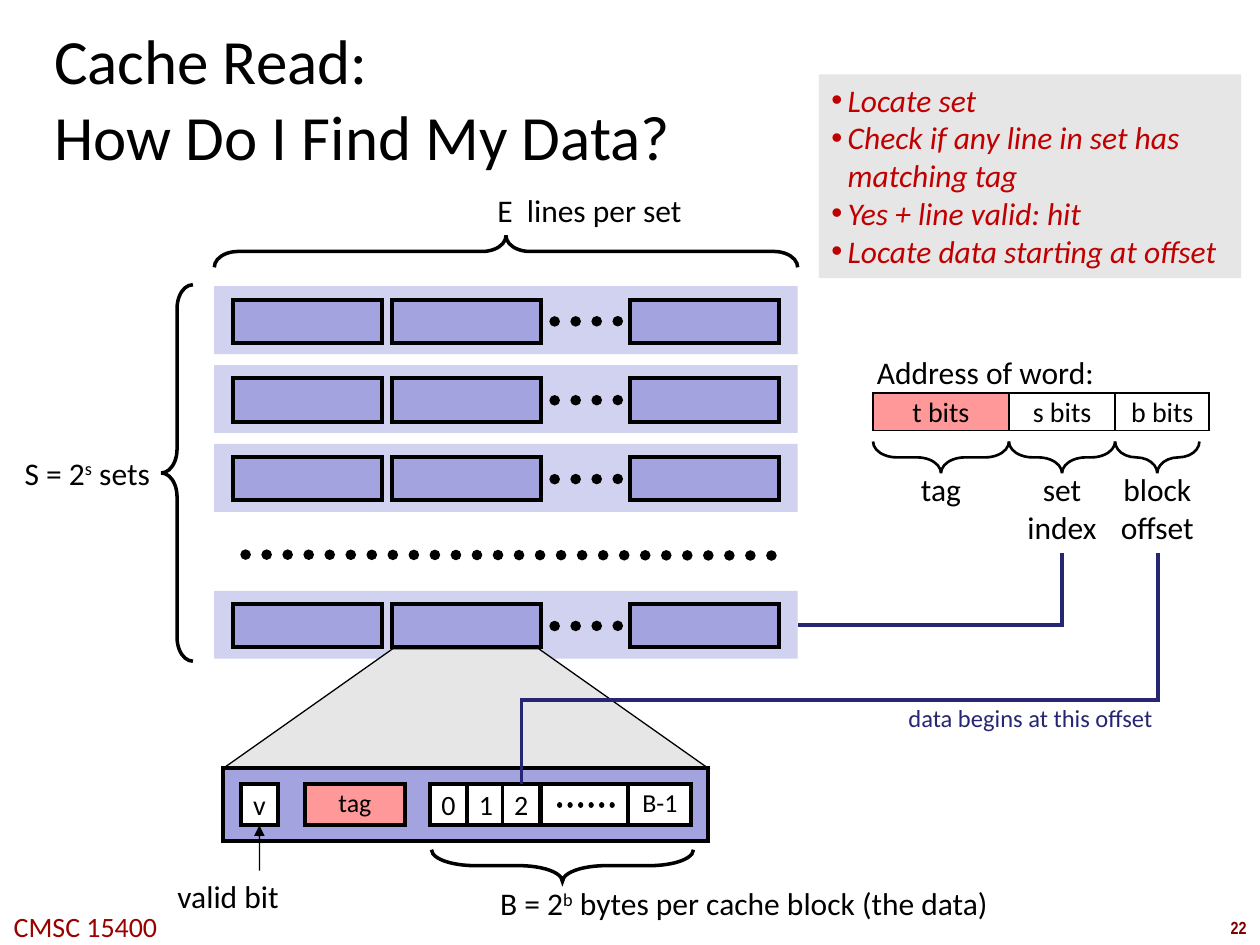
import lxml.etree
import pptx
import pptx.dml.color
import pptx.enum.dml
import pptx.enum.shapes
import pptx.enum.text
import pptx.oxml.ns
import pptx.util

Cm, Pt = pptx.util.Cm, pptx.util.Pt
qn = pptx.oxml.ns.qn
SHAPE = pptx.enum.shapes.MSO_SHAPE
CONNECTOR = pptx.enum.shapes.MSO_CONNECTOR
ALIGN = pptx.enum.text.PP_ALIGN
ANCHOR = pptx.enum.text.MSO_ANCHOR

COLOURS = {
    "black": "000000", "white": "FFFFFF", "grey": "E6E6E6",
    "set": "D1D1F0", "line": "A3A3E0", "tag": "FF9999",
    "navy": "262673", "note": "C00000", "course": "990000", "number": "800000",
}


def colour(name):
    return pptx.dml.color.RGBColor.from_string(COLOURS[name])


def add_xml(parent, tag, **attributes):
    return lxml.etree.SubElement(parent, qn(tag), attributes)


class Diagram:
    """Draws styled elements on the current page; lengths are centimetres."""

    def __init__(self, page, font="Calibri"):
        self.page = page
        self.canvas = page.shapes
        self.font = font

    def add_spans(self, para, text, size, ink="black", font=None, bold=False, italic=False):
        """Add runs to a paragraph; ^x^ marks a superscript."""
        for index, part in enumerate(text.split("^")):
            span = para.add_run()
            span.text = part
            span.font.size = Pt(size)
            span.font.name = font or self.font
            span.font.bold, span.font.italic = bold, italic
            span.font.color.rgb = colour(ink)
            if index % 2:
                span._r.get_or_add_rPr().set("baseline", "30000")

    def label(self, lines, left, top, width, height, size=18, **style):
        """Centred text without wrapping, one paragraph per line."""
        box = self.canvas.add_textbox(Cm(left), Cm(top), Cm(width), Cm(height))
        frame = box.text_frame
        frame.word_wrap = False
        for index, line in enumerate(lines.split("\n")):
            para = frame.add_paragraph() if index else frame.paragraphs[0]
            para.alignment = ALIGN.CENTER
            self.add_spans(para, line, size, **style)

    def title(self, lines, left, top, width, height):
        box = self.canvas.add_textbox(Cm(left), Cm(top), Cm(width), Cm(height))
        frame = box.text_frame
        frame.word_wrap = True
        frame.vertical_anchor = ANCHOR.MIDDLE
        frame.margin_left = frame.margin_right = Cm(0.1)
        frame.margin_top = frame.margin_bottom = Cm(0.1)
        para = frame.paragraphs[0]
        for index, line in enumerate(lines):
            if index:
                para.add_line_break()
            self.add_spans(para, line, 36)

    def block(self, left, top, width, height, fill=None, weight=2.25, text="",
              size=16, spacing=None, kind=SHAPE.RECTANGLE, adjust=()):
        shape = self.canvas.add_shape(kind, Cm(left), Cm(top), Cm(width), Cm(height))
        shape.shadow.inherit = False
        for index, value in enumerate(adjust):
            shape.adjustments[index] = value
        if fill:
            shape.fill.solid()
            shape.fill.fore_color.rgb = colour(fill)
        else:
            shape.fill.background()
        if weight:
            shape.line.color.rgb = colour("black")
            shape.line.width = Pt(weight)
            add_xml(shape.line._get_or_add_ln(), "a:miter", lim="800000")
        else:
            shape.line.fill.background()
        if text:
            frame = shape.text_frame
            frame.word_wrap = False
            frame.vertical_anchor = ANCHOR.MIDDLE
            para = frame.paragraphs[0]
            para.alignment = ALIGN.CENTER
            para.line_spacing = spacing
            self.add_spans(para, text, size)
        return shape

    def brace(self, left, top, width, height, turn=0, weight=2, curl=0.75):
        """Brace filling the box as seen; turn 90 points up, 270 down."""
        if turn:
            left, top = left + (width - height) / 2, top + (height - width) / 2
            width, height = height, width
        shape = self.block(left, top, width, height, weight=weight,
                           kind=SHAPE.LEFT_BRACE, adjust=(curl, 0.5))
        shape.rotation = turn

    def connector(self, start, end, ink="black", weight=2, dotted=False,
                  arrow=False, kind=CONNECTOR.STRAIGHT):
        line = self.canvas.add_connector(kind, *(Cm(v) for v in (*start, *end)))
        line.line.color.rgb = colour(ink)
        line.line.width = Pt(weight)
        outline = line.line._get_or_add_ln()
        if dotted:
            line.line.dash_style = pptx.enum.dml.MSO_LINE.ROUND_DOT
            outline.set("cap", "rnd")
        if kind == CONNECTOR.ELBOW:
            add_xml(outline, "a:miter", lim="800000")
        if arrow:
            add_xml(outline, "a:tailEnd", type="triangle")
        add_xml(line._element.spPr, "a:effectLst")
        return line

    def elbow(self, start, end, bend=None):
        """Route that leaves downwards and runs left, with a second bend if given."""
        run, drop = start[0] - end[0], end[1] - start[1]
        middle_x, middle_y = (start[0] + end[0]) / 2, (start[1] + end[1]) / 2
        left, top = middle_x - drop / 2, middle_y - run / 2
        line = self.connector((left, top), (left + drop, top + run), "navy",
                              kind=CONNECTOR.ELBOW)
        properties = line._element.spPr
        properties.find(qn("a:xfrm")).set("rot", "5400000")
        geometry = properties.find(qn("a:prstGeom"))
        if bend is None:
            geometry.set("prst", "bentConnector2")
        else:
            guides = geometry.find(qn("a:avLst"))
            if guides is None:
                guides = add_xml(geometry, "a:avLst")
            add_xml(guides, "a:gd", name="adj1", fmla=f"val {round(bend * 100000)}")

    def cache_set(self, top):
        """One set: three cache lines and dots, grouped."""
        self.canvas = self.page.shapes.add_group_shape().shapes
        self.block(4.32, top, 11.76, 1.37, "set", weight=0)
        for left in (4.7, 7.9, 12.7):
            last_line = self.block(left, top + 0.27, 3, 0.87, "line")
        middle = top + 0.71
        dots = self.connector((11.18, middle), (12.7, middle), weight=6, dotted=True)
        dots.end_connect(last_line, 1)
        self.canvas = self.page.shapes

    def bullets(self, lines, left, top, width, height):
        frame = self.block(left, top, width, height, "grey", weight=0).text_frame
        frame.word_wrap = True
        frame.vertical_anchor = ANCHOR.TOP
        for index, line in enumerate(lines):
            para = frame.add_paragraph() if index else frame.paragraphs[0]
            para.alignment = ALIGN.LEFT
            properties = para._p.get_or_add_pPr()
            properties.set("marL", str(Cm(0.33)))
            properties.set("indent", str(-Cm(0.33)))
            add_xml(properties, "a:buFont", typeface="Arial")
            add_xml(properties, "a:buChar", char="•")
            self.add_spans(para, line, 18, "note", italic=True)


def main():
    deck = pptx.Presentation()
    deck.slide_width, deck.slide_height = Cm(25.4), Cm(19.05)
    diagram = Diagram(deck.slides.add_slide(deck.slide_layouts[6]))

    # Footer and title
    diagram.label("22", 24.54, 18.36, 0.86, 0.69, 10, ink="number",
                  font="Arial Narrow", bold=True)
    diagram.label("CMSC 15400", 0, 18.21, 3.45, 0.94, 16, ink="course")
    diagram.title(["Cache Read: ", "How Do I Find My Data?"], 0.99, 0.91, 21.08, 2.11)

    # Cache: S sets of E lines
    for top in [5.77 + 1.59 * row for row in range(3)] + [11.91]:
        diagram.cache_set(top)
    diagram.connector((4.95, 11.18), (15.72, 11.2), weight=6, dotted=True)
    diagram.brace(4.32, 4.75, 11.76, 0.64, turn=90)
    diagram.label("E  lines per set", 9.75, 3.73, 4.27, 1.02)
    diagram.brace(3.25, 5.74, 0.64, 7.59)
    diagram.label("S = 2^s^ sets", 0.2, 9.02, 3.12, 1.02)

    # One line enlarged
    diagram.block(4.5, 13.08, 9.78, 2.41, "grey", 0.75, kind=SHAPE.TRAPEZOID,
                  adjust=(1.418,))
    diagram.block(4.5, 15.49, 9.78, 1.47, "line")
    cell_top, cell_height = 15.8, 0.84
    for left, width, fill, text, size, spacing in (
        (8.66, 0.76, "white", "0", 16, None),
        (9.42, 0.76, "white", "1", 16, None),
        (10.13, 0.76, "white", "2", 16, None),
        (12.67, 1.27, "white", "B-1", 14.8, 0.9),
        (10.9, 1.77, "white", "", 16, None),
        (6.15, 2.01, "tag", "tag", 14.8, 0.9),
        (4.85, 0.76, "white", "v", 16, None),
    ):
        valid_cell = diagram.block(left, cell_top, width, cell_height, fill,
                                   text=text, size=size, spacing=spacing)
    diagram.connector((11.28, 16.23), (12.55, 16.23), weight=3, dotted=True)
    diagram.label("valid bit", 3.28, 17.55, 2.64, 1.02)
    arrow = diagram.connector((5.23, 17.55), (5.23, 16.64), weight=0.75, arrow=True)
    arrow.end_connect(valid_cell, 2)
    diagram.brace(8.7, 17.13, 5.28, 0.64, turn=270, curl=1.37)
    diagram.label("B = 2^b^ bytes per cache block (the data)", 9.68, 17.7, 10.64, 1.02)

    # Address fields
    diagram.label("Address of word:", 17.35, 6.99, 5.03, 1.02)
    for left, width, brace_width, fill, bits, name in (
        (17.6, 2.74, 2.74, "tag", "t bits", "tag"),
        (20.34, 2.14, 2.14, "white", "s bits", "set\nindex"),
        (22.48, 1.9, 1.7, "white", "b bits", "block\noffset"),
    ):
        diagram.block(left, 7.92, width, 0.76, fill, 1, bits)
        diagram.brace(left, 8.9, brace_width, 0.64, turn=270, weight=1.5)
        diagram.label(name, left - 0.3, 9.35, brace_width + 0.6, 1.8)

    # Routes from the address to the set and the byte
    diagram.elbow((21.41, 11.15), (16.08, 12.6))
    diagram.elbow((23.34, 11.15), (10.51, 15.8), bend=0.638)
    diagram.label("data begins at this offset", 17.98, 14.05, 5.59, 0.86, 14, ink="navy")

    # Steps
    diagram.bullets(["Locate set", "Check if any line in set has matching tag",
                     "Yes + line valid: hit", "Locate data starting at offset"],
                    16.51, 1.5, 8.51, 4.11)
    deck.save("out.pptx")


if __name__ == "__main__":
    main()
